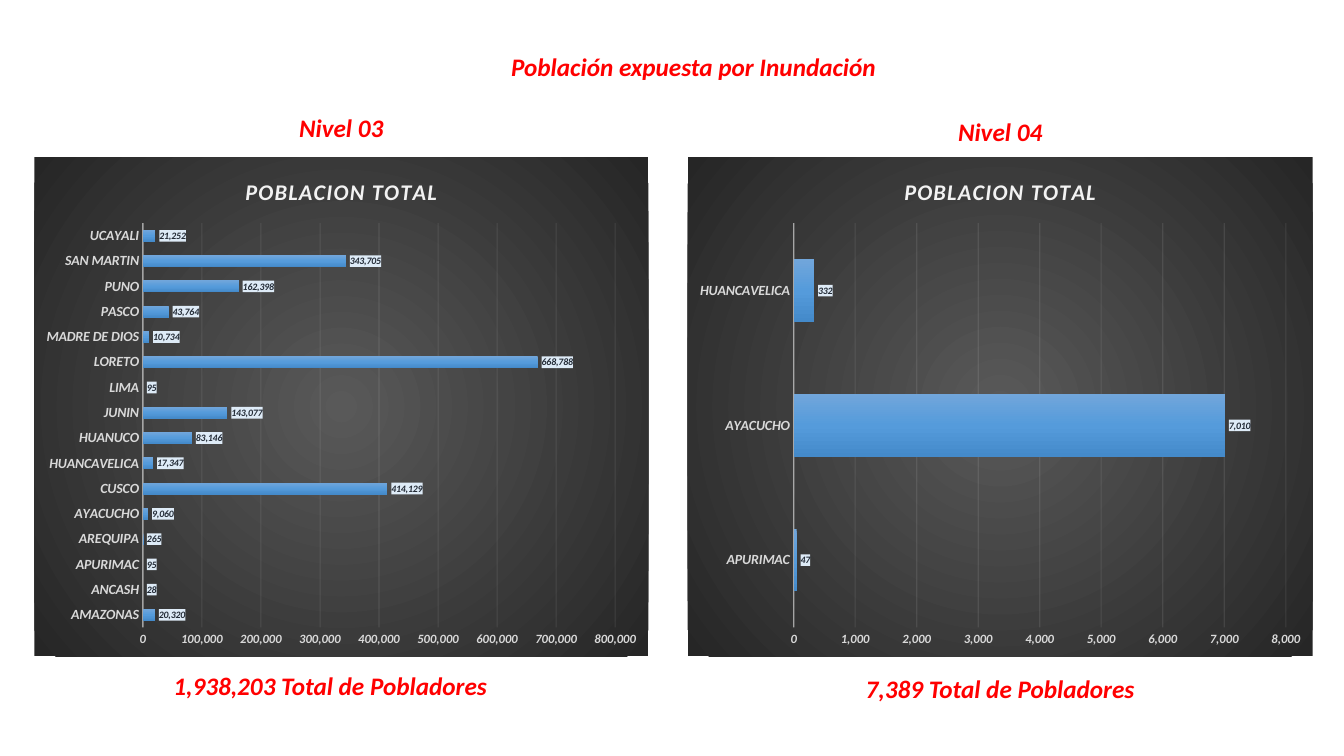
from dataclasses import dataclass

from lxml.etree import SubElement
from pptx import Presentation
from pptx.chart.data import CategoryChartData
from pptx.dml.color import RGBColor
from pptx.enum.chart import XL_CHART_TYPE, XL_LABEL_POSITION, XL_TICK_MARK
from pptx.enum.text import MSO_ANCHOR, PP_ALIGN
from pptx.oxml import parse_xml
from pptx.oxml.ns import nsdecls, qn
from pptx.util import Inches, Pt


@dataclass(frozen=True)
class Theme:
    font: str = "Calibri"
    heading: str = "FF0000"
    chart_title: str = "F2F2F2"
    axis_text: str = "D9D9D9"
    axis_line: str = "F2F2F2"
    label_text: str = "222A35"
    label_fill: str = "DEEBF7"
    backdrop: tuple = ((0, "595959"), (100, "262626"))
    bars: tuple = ((0, "71A6DB"), (50, "559BDB"), (100, "448ACA"))
    heading_size: float = 18
    chart_title_size: float = 16
    category_size: float = 10
    value_size: float = 9
    label_size: float = 7


@dataclass(frozen=True)
class Box:
    left: float
    top: float
    width: float
    height: float

    def inches(self):
        return [Inches(n) for n in (self.left, self.top, self.width, self.height)]


THEME = Theme()
SLIDE_WIDTH, SLIDE_HEIGHT = 13.33, 7.5
LINE_HEIGHT = 0.4
SERIES_NAME = "POBLACION TOTAL"
LEVEL_3 = {
    "AMAZONAS": 20320, "ANCASH": 28, "APURIMAC": 95, "AREQUIPA": 265,
    "AYACUCHO": 9060, "CUSCO": 414129, "HUANCAVELICA": 17347,
    "HUANUCO": 83146, "JUNIN": 143077, "LIMA": 95, "LORETO": 668788,
    "MADRE DE DIOS": 10734, "PASCO": 43764, "PUNO": 162398,
    "SAN MARTIN": 343705, "UCAYALI": 21252,
}
LEVEL_4 = {"APURIMAC": 47, "AYACUCHO": 7010, "HUANCAVELICA": 332}


def style_font(font, size, color):
    font.name, font.size = THEME.font, Pt(size)
    font.bold = font.italic = True
    font.color.rgb = RGBColor.from_string(color)


def write_text(frame, text, size=THEME.heading_size, color=THEME.heading, wrap=True):
    frame.word_wrap = wrap
    paragraph = frame.paragraphs[0]
    paragraph.alignment = PP_ALIGN.CENTER
    run = paragraph.add_run()
    run.text = text
    style_font(run.font, size, color)
    return run


def shape_properties(fill):
    return parse_xml(f'<c:spPr {nsdecls("c", "a")}>{fill}<a:ln><a:noFill/></a:ln></c:spPr>')


def gradient(stops, direction):
    marks = "".join(
        f'<a:gs pos="{share * 1000}"><a:srgbClr val="{color}"/></a:gs>'
        for share, color in stops
    )
    return f'<a:gradFill rotWithShape="1"><a:gsLst>{marks}</a:gsLst>{direction}</a:gradFill>'


def style_line(line, width, opacity):
    line.width = Pt(width)
    line.color.rgb = RGBColor.from_string(THEME.axis_line)
    for color in line.fill._xPr.iter(qn("a:srgbClr")):
        SubElement(color, qn("a:alpha"), val=str(opacity * 1000))


def style_axes(chart):
    categories, values = chart.category_axis, chart.value_axis
    for axis, size in ((categories, THEME.category_size), (values, THEME.value_size)):
        axis.major_tick_mark = axis.minor_tick_mark = XL_TICK_MARK.NONE
        style_font(axis.tick_labels.font, size, THEME.axis_text)
    style_line(categories.format.line, 1, 54)
    values.format.line.fill.background()
    values.has_major_gridlines = True
    style_line(values.major_gridlines.format.line, 0.75, 10)
    values.tick_labels.number_format = "#,##0"
    values.tick_labels.number_format_is_linked = False


def style_bars(plot):
    plot.gap_width, plot.overlap = 115, -20
    plot.vary_by_categories = False
    bars = plot.series[0]
    bars.invert_if_negative = False
    labels = bars.data_labels
    labels.show_value = True
    labels.position = XL_LABEL_POSITION.OUTSIDE_END
    labels.number_format, labels.number_format_is_linked = "#,##0", False
    style_font(labels.font, THEME.label_size, THEME.label_text)


def paint_chart(chart):
    """Add the gradients and the fill behind the labels."""
    root = chart.element
    center = '<a:path path="circle"><a:fillToRect l="50000" t="50000" r="50000" b="50000"/></a:path>'
    root.find(qn("c:chart")).addnext(shape_properties(gradient(THEME.backdrop, center)))
    bars = root.find(".//" + qn("c:ser"))
    down = '<a:lin ang="5400000" scaled="0"/>'
    bars.find(qn("c:tx")).addnext(shape_properties(gradient(THEME.bars, down)))
    label_fill = f'<a:solidFill><a:srgbClr val="{THEME.label_fill}"/></a:solidFill>'
    label_text = bars.find(qn("c:dLbls")).find(qn("c:txPr"))
    label_text.addprevious(shape_properties(label_fill))


def add_population_chart(slide, box, population):
    data = CategoryChartData(number_format="#,##0")
    data.categories = list(population)
    data.add_series(SERIES_NAME, list(population.values()))
    chart = slide.shapes.add_chart(XL_CHART_TYPE.BAR_CLUSTERED, *box.inches(), data).chart
    chart.has_legend = False
    chart.font.name, chart.font.size = THEME.font, Pt(THEME.category_size)
    chart.has_title = True
    title = write_text(chart.chart_title.text_frame, SERIES_NAME,
                       THEME.chart_title_size, THEME.chart_title)
    title.font._element.set("spc", "100")
    chart.chart_title.include_in_layout = False
    style_axes(chart)
    style_bars(chart.plots[0])
    paint_chart(chart)


def add_caption(slide, text, center, top, width):
    box = Box(center - width / 2, top, width, LINE_HEIGHT)
    write_text(slide.shapes.add_textbox(*box.inches()).text_frame, text)


def add_level_panel(slide, box, level, total, population, drop=0, total_shift=0):
    """Center the level above its chart and the total below it."""
    center = box.left + box.width / 2
    add_caption(slide, level, center, box.top - 0.49 + drop, 1.08)
    add_population_chart(slide, box, population)
    add_caption(slide, f"{total} Total de Pobladores", center + total_shift,
                box.top + box.height + 0.09 + drop, 3.35)


def add_title(slide, text, box):
    title = slide.shapes.title
    title.left, title.top, title.width, title.height = box.inches()
    title.text_frame.vertical_anchor = MSO_ANCHOR.TOP
    write_text(title.text_frame, text, wrap=False)


def main():
    presentation = Presentation()
    presentation.slide_width = Inches(SLIDE_WIDTH)
    presentation.slide_height = Inches(SLIDE_HEIGHT)
    slide = presentation.slides.add_slide(presentation.slide_layouts.get_by_name("Title Only"))
    add_title(slide, "Población expuesta por Inundación", Box(4.95, 0.46, 3.86, LINE_HEIGHT))
    add_level_panel(slide, Box(0.34, 1.56, 6.09, 4.95), "Nivel 03", "1,938,203",
                    LEVEL_3, total_shift=-0.11)
    add_level_panel(slide, Box(6.82, 1.56, 6.2, 4.95), "Nivel 04", "7,389",
                    LEVEL_4, drop=0.03)
    presentation.save("out.pptx")


if __name__ == "__main__":
    main()
